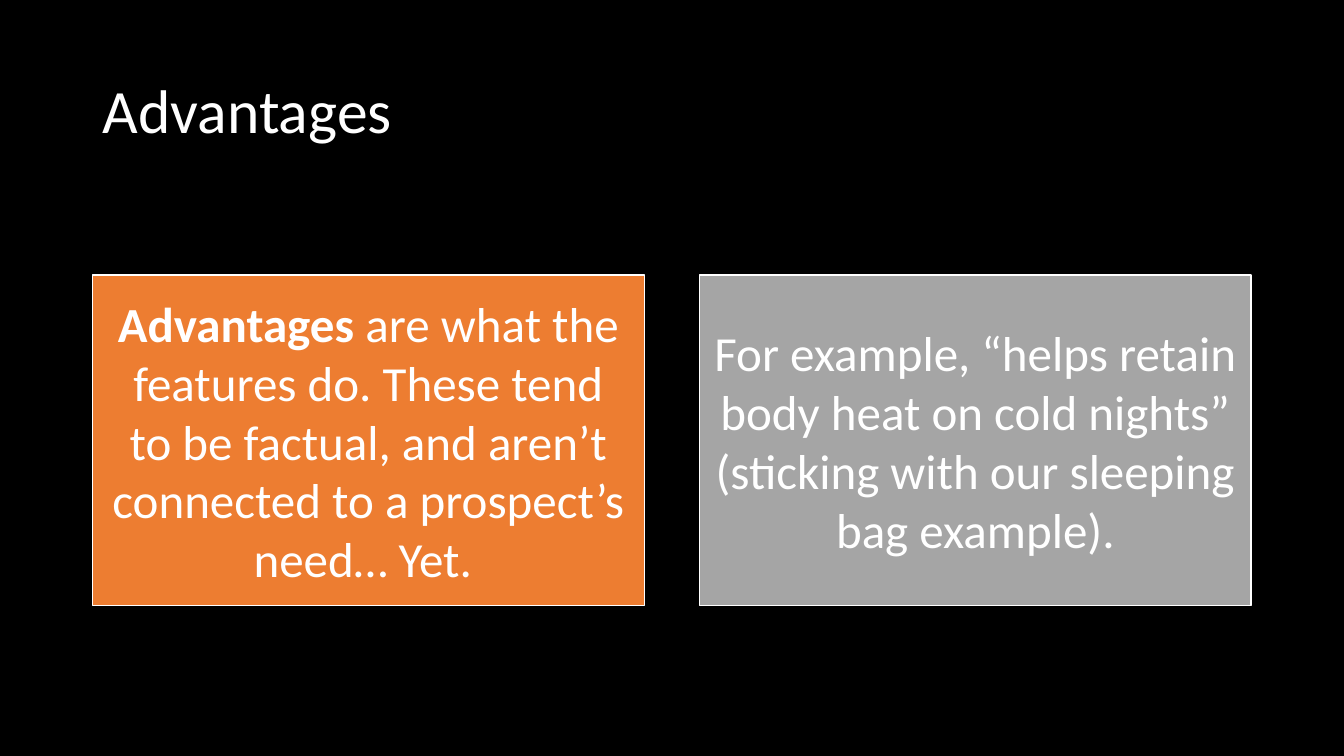
from dataclasses import dataclass

from pptx import Presentation
from pptx.dml.color import RGBColor
from pptx.enum.shapes import MSO_SHAPE
from pptx.enum.text import MSO_ANCHOR, MSO_AUTO_SIZE, PP_ALIGN
from pptx.slide import Slide
from pptx.text.text import _Paragraph
from pptx.util import Emu, Pt

RECT = MSO_SHAPE.RECTANGLE
MIDDLE = MSO_ANCHOR.MIDDLE
SHRINK = MSO_AUTO_SIZE.TEXT_TO_FIT_SHAPE
LEFT, CENTER = PP_ALIGN.LEFT, PP_ALIGN.CENTER

FONT = "Calibri"
WHITE = "FFFFFF"
BLACK = "000000"
EDGE = 92
TOP = 273
WIDTH, HEIGHT = 547, 328
GAP = 55
SIDE, INSET = 14, 15


@dataclass
class Run:
    text: str
    bold: bool = False


@dataclass
class Card:
    fill: str
    runs: list[Run]


CARDS = [
    Card("ED7D31", [
        Run("Advantages", True),
        Run(" are what the features do. These tend to be factual, "
            "and aren’t connected to a prospect’s need… Yet. "),
    ]),
    Card("A5A5A5", [
        Run("For example, “helps retain body heat on cold nights” "
            "(sticking with our sleeping bag example)."),
    ]),
]


def px(count: int) -> Emu:
    """Turn px, at 100 to the inch, into EMU."""
    return Emu(count * 9144)


def color(code: str) -> RGBColor:
    return RGBColor.from_string(code)


def add_run(para: _Paragraph, run: Run, size: int) -> None:
    part = para.add_run()
    part.text = run.text
    font = part.font
    font.name, font.size, font.bold = FONT, Pt(size), run.bold
    font.color.rgb = color(WHITE)


def add_title(slide: Slide, text: str) -> None:
    title = slide.shapes.title
    title.left, title.top = px(EDGE), px(40)
    title.width, title.height = px(1150), px(145)
    frame = title.text_frame
    frame.vertical_anchor = MIDDLE
    para = frame.paragraphs[0]
    para.alignment = LEFT
    para.line_spacing = 0.9
    add_run(para, Run(text), 44)


def add_card(slide: Slide, card: Card, left: int) -> None:
    box = slide.shapes.add_shape(RECT, px(left), px(TOP), px(WIDTH), px(HEIGHT))
    box.shadow.inherit = False
    box.fill.solid()
    box.fill.fore_color.rgb = color(card.fill)
    box.line.color.rgb = color(WHITE)
    box.line.width = Pt(1)

    frame = box.text_frame
    frame.word_wrap = True
    frame.auto_size = SHRINK
    frame.vertical_anchor = MIDDLE
    frame.margin_left = frame.margin_right = px(SIDE)
    frame.margin_top = frame.margin_bottom = px(INSET)
    para = frame.paragraphs[0]
    para.alignment = CENTER
    for run in card.runs:
        add_run(para, run, 35)


def main() -> None:
    deck = Presentation()
    deck.slide_width, deck.slide_height = px(1333), px(750)
    slide = deck.slides.add_slide(deck.slide_layouts[5])

    # Background
    back = slide.background.fill
    back.solid()
    back.fore_color.rgb = color(BLACK)

    # Title and cards
    add_title(slide, "Advantages")
    for spot, card in enumerate(CARDS):
        add_card(slide, card, EDGE + spot * (WIDTH + GAP))

    deck.save("out.pptx")


if __name__ == "__main__":
    main()
